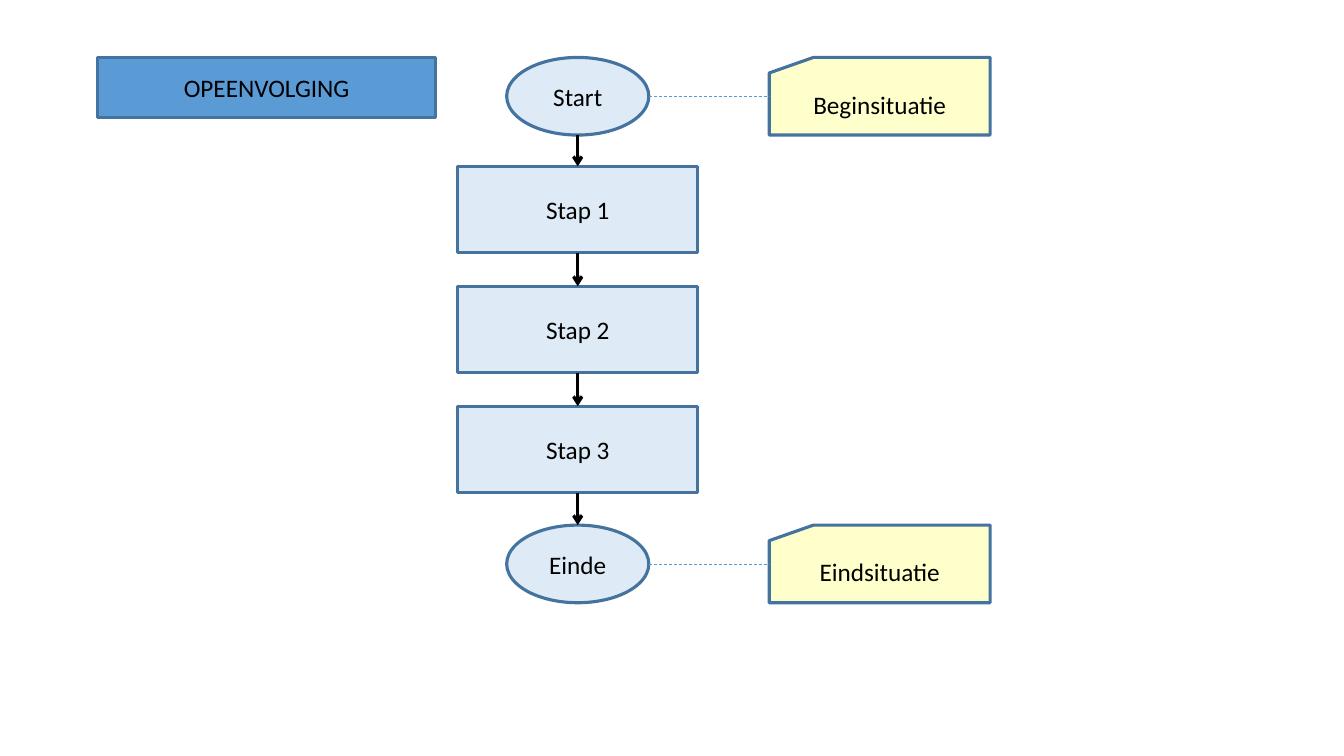
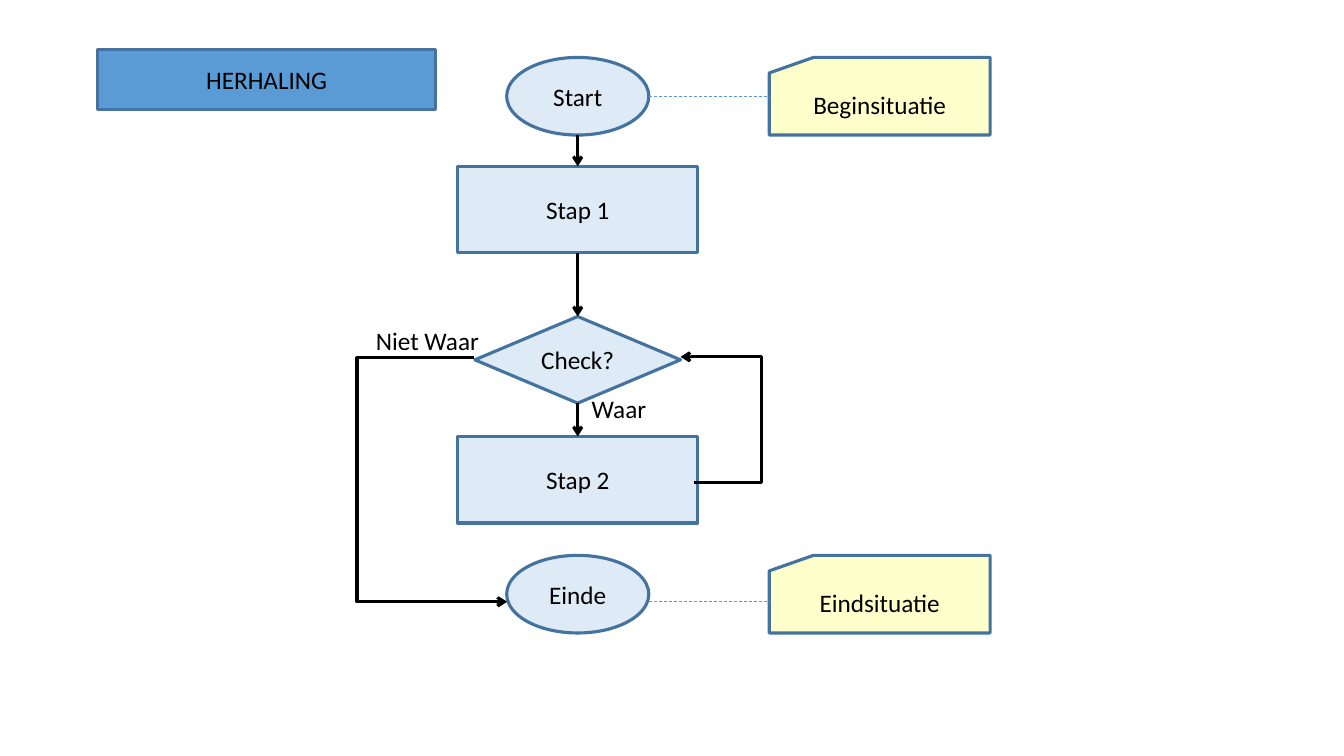
from lxml import etree
from pptx import Presentation
from pptx.dml.color import RGBColor
from pptx.enum.dml import MSO_LINE
from pptx.enum.shapes import MSO_CONNECTOR, MSO_SHAPE
from pptx.enum.text import MSO_ANCHOR, MSO_AUTO_SIZE, PP_ALIGN
from pptx.oxml.ns import qn
from pptx.util import Inches, Pt

OVAL, RECT = MSO_SHAPE.OVAL, MSO_SHAPE.RECTANGLE
DIAMOND, CARD = MSO_SHAPE.DIAMOND, MSO_SHAPE.FLOWCHART_CARD
STRAIGHT, DASH = MSO_CONNECTOR.STRAIGHT, MSO_LINE.DASH
MIDDLE, CENTER, LEFT = MSO_ANCHOR.MIDDLE, PP_ALIGN.CENTER, PP_ALIGN.LEFT
NO_FIT, GROW = MSO_AUTO_SIZE.NONE, MSO_AUTO_SIZE.SHAPE_TO_FIT_TEXT

BLACK = RGBColor(0x00, 0x00, 0x00)
BLUE = RGBColor(0x5B, 0x9B, 0xD5)
EDGE = RGBColor(0x43, 0x73, 0x9E)
PALE = RGBColor(0xDE, 0xEB, 0xF7)
CREAM = RGBColor(0xFF, 0xFF, 0xCC)

FONT = {"name": "Calibri", "size": Pt(18), "bold": False}
FLOW = {"width": Pt(2.25)}
DASHED = {"width": Pt(0.5), "dash_style": DASH}

MID = 5.73
NOTE_X = 7.63
SIZES = {OVAL: (1.41, 0.77), RECT: (2.38, 0.86),
         DIAMOND: (2.04, 0.86), CARD: (2.19, 0.77)}
TOP, BOTTOM, LEFT_SIDE = 0, 2, 1


def style(item, values):
    for name, value in values.items():
        setattr(item, name, value)


def write(shape, text, align=CENTER, wrap=True, fit=NO_FIT):
    frame = shape.text_frame
    frame.text = text
    style(frame, {"word_wrap": wrap, "auto_size": fit})
    par = frame.paragraphs[0]
    par.alignment = align
    style(par.font, FONT)
    par.font.color.rgb = BLACK


def paint(shape, fill):
    shape.fill.solid()
    shape.fill.fore_color.rgb = fill
    shape.line.color.rgb = EDGE
    style(shape.line, FLOW)


def add_head(shape):
    """Put an open arrowhead at the end of a line."""
    line = shape.element.spPr.find(qn("a:ln"))
    etree.SubElement(line, qn("a:tailEnd"), type="arrow")


def add_title(slide, text, top):
    title = slide.shapes.title
    style(title, {"left": Inches(0.97), "top": Inches(top),
                  "width": Inches(3.35), "height": Inches(0.6)})
    paint(title, BLUE)
    write(title, text)
    title.text_frame.vertical_anchor = MIDDLE


def add_node(slide, kind, text, top, left=None, fill=PALE):
    """Add a labelled shape, centred on the flow unless left is given."""
    wide, high = SIZES[kind]
    if left is None:
        left = MID - wide / 2
    node = slide.shapes.add_shape(
        kind, Inches(left), Inches(top), Inches(wide), Inches(high))
    node.shadow.inherit = False
    paint(node, fill)
    write(node, text)
    node.text_frame.vertical_anchor = MIDDLE
    return node


def add_line(slide, start, end, color, values):
    line = slide.shapes.add_connector(STRAIGHT, *start, *end)
    line.line.color.rgb = color
    style(line.line, values)
    etree.SubElement(line.element.spPr, qn("a:effectLst"))
    return line


def add_arrow(slide, upper, lower):
    """Point from one node down to the next, joined except at ovals."""
    x = Inches(MID)
    line = add_line(slide, (x, upper.top + upper.height), (x, lower.top),
                    BLACK, FLOW)
    if upper.auto_shape_type != OVAL:
        line.begin_connect(upper, BOTTOM)
    if lower.auto_shape_type != OVAL:
        line.end_connect(lower, TOP)
    add_head(line)


def add_note(slide, node, text, drop=0):
    """Add a card beside a node; drop lowers the dashed line below centre."""
    card = add_node(slide, CARD, text, node.top.inches, NOTE_X, CREAM)
    y = node.top + node.height // 2 + Inches(drop)
    line = add_line(slide, (node.left + node.width, y), (card.left, y),
                    BLUE, DASHED)
    if not drop:
        line.end_connect(card, LEFT_SIDE)


def add_path(slide, points):
    """Draw an open bent arrow through the points."""
    first, *rest = [(Inches(x), Inches(y)) for x, y in points]
    pen = slide.shapes.build_freeform(*first)
    pen.add_line_segments(rest, close=False)
    path = pen.convert_to_shape()
    path.shadow.inherit = False
    path.fill.background()
    path.line.color.rgb = BLACK
    style(path.line, FLOW)
    add_head(path)


def add_label(slide, text, left, top, wide):
    box = slide.shapes.add_textbox(
        Inches(left), Inches(top), Inches(wide), Inches(0.4))
    write(box, text, LEFT, False, GROW)


def add_flow(deck, title, title_top, steps, end_top, drop=0):
    """Build a slide with a start, steps, an end and two notes."""
    slide = deck.slides.add_slide(deck.slide_layouts[5])
    add_title(slide, title, title_top)
    start = add_node(slide, OVAL, "Start", 0.57)
    nodes = [start] + [add_node(slide, *step) for step in steps]
    end = add_node(slide, OVAL, "Einde", end_top)
    add_note(slide, start, "Beginsituatie")
    add_note(slide, end, "Eindsituatie", drop)
    for upper, lower in zip(nodes, nodes[1:]):
        add_arrow(slide, upper, lower)
    return slide, nodes[-1], end


def add_sequence(deck):
    steps = [(RECT, f"Stap {i + 1}", 1.65 + 1.19 * i) for i in range(3)]
    slide, last, end = add_flow(deck, "OPEENVOLGING", 0.57, steps, 5.21)
    add_arrow(slide, last, end)


def add_loop(deck):
    steps = [(RECT, "Stap 1", 1.65), (DIAMOND, "Check?", 3.14),
             (RECT, "Stap 2", 4.33)]
    slide, *_ = add_flow(deck, "HERHALING", 0.49, steps, 5.51, 0.07)
    add_label(slide, "Waar", 5.77, 3.85, 0.75)
    add_label(slide, "Niet Waar", 3.63, 3.18, 1.23)
    add_path(slide, [(4.7, 3.55), (3.54, 3.55), (3.54, 5.97), (5.03, 5.97)])
    add_path(slide, [(6.88, 4.79), (7.55, 4.79), (7.55, 3.54), (6.75, 3.54)])


def main():
    deck = Presentation()
    deck.slide_width, deck.slide_height = Inches(13.33), Inches(7.5)
    add_sequence(deck)
    add_loop(deck)
    deck.save("out.pptx")


if __name__ == "__main__":
    main()
